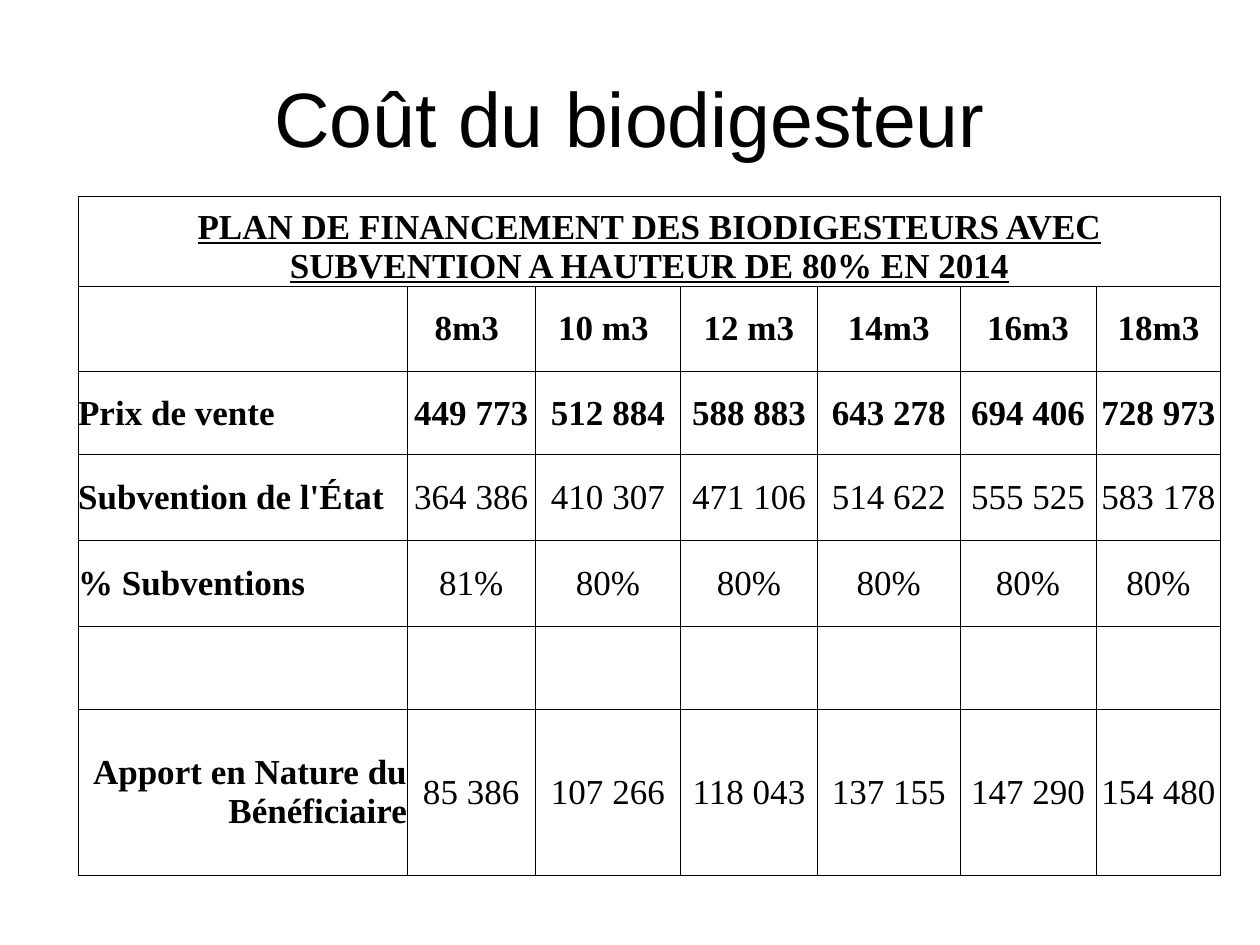
"""Build the slide on the cost and financing of biodigesters."""
from dataclasses import dataclass

from lxml import etree
from pptx import Presentation
from pptx.dml.color import RGBColor
from pptx.enum.text import MSO_ANCHOR, PP_ALIGN
from pptx.oxml.ns import qn
from pptx.slide import Slide
from pptx.table import _Cell
from pptx.text.text import TextFrame
from pptx.util import Pt

LEFT, CENTER, RIGHT = PP_ALIGN.LEFT, PP_ALIGN.CENTER, PP_ALIGN.RIGHT
MIDDLE, BOTTOM = MSO_ANCHOR.MIDDLE, MSO_ANCHOR.BOTTOM
COLORS = {"text": "000000", "border": "000000", "cell": "FFFFFF"}
COLUMN_WIDTHS = [187.92, 73.44, 82.8, 78.48, 81.36, 77.76, 71.28]
HEADING_HEIGHT = 51.12
BORDER_WIDTH = 0.5


@dataclass(frozen=True)
class TextStyle:
    size: float
    font: str
    bold: bool = False
    underline: bool = False
    alignment: PP_ALIGN = CENTER


@dataclass(frozen=True)
class FinancingRow:
    height: float
    label: str
    values: tuple[str, ...]
    bold_values: bool = False
    label_alignment: PP_ALIGN = LEFT


TITLE_STYLE = TextStyle(44, "Arial")
HEADING_STYLE = TextStyle(20, "Times New Roman", bold=True, underline=True)
HEADING = "PLAN DE FINANCEMENT DES BIODIGESTEURS AVEC SUBVENTION A HAUTEUR DE 80% EN 2014"
ROWS = [
    FinancingRow(48.96, "", ("8m3 ", "10 m3 ", "12 m3", "14m3", "16m3", "18m3"), True),
    FinancingRow(47.52, "Prix de vente",
                 ("449 773", "512 884", "588 883", "643 278", "694 406", "728 973"), True),
    FinancingRow(48.96, "Subvention de l'État",
                 ("364 386", "410 307", "471 106", "514 622", "555 525", "583 178")),
    FinancingRow(48.96, "% Subventions", ("81%",) + ("80%",) * 5),
    FinancingRow(47.52, "", ("",) * 6),
    FinancingRow(95.04, "Apport en Nature du Bénéficiaire",
                 ("85 386", "107 266", "118 043", "137 155", "147 290", "154 480"),
                 label_alignment=RIGHT),
]


def write_text(text_frame: TextFrame, text: str, style: TextStyle) -> None:
    """Write one styled run into the first paragraph."""
    paragraph = text_frame.paragraphs[0]
    paragraph.alignment = style.alignment
    run = paragraph.add_run()
    run.text = text
    run.font.size = Pt(style.size)
    run.font.name = style.font
    run.font.bold = style.bold
    run.font.underline = style.underline
    run.font.color.rgb = RGBColor.from_string(COLORS["text"])


def format_cell(cell: _Cell) -> None:
    """Give a cell thin borders, a plain fill and no margins."""
    properties = cell._tc.get_or_add_tcPr()
    for side in ("a:lnL", "a:lnR", "a:lnT", "a:lnB"):
        line = etree.SubElement(properties, qn(side), w=str(Pt(BORDER_WIDTH)))
        fill = etree.SubElement(line, qn("a:solidFill"))
        etree.SubElement(fill, qn("a:srgbClr"), val=COLORS["border"])
    cell.fill.solid()
    cell.fill.fore_color.rgb = RGBColor.from_string(COLORS["cell"])
    cell.margin_left = cell.margin_right = cell.margin_top = cell.margin_bottom = 0
    cell.vertical_anchor = MIDDLE


def add_title(slide: Slide) -> None:
    """Add the centred slide title."""
    shape = slide.shapes.add_textbox(Pt(36), Pt(21.6), Pt(648), Pt(90))
    shape.text_frame.word_wrap = True
    shape.text_frame.vertical_anchor = MIDDLE
    write_text(shape.text_frame, "Coût du biodigesteur", TITLE_STYLE)


def add_financing_table(slide: Slide) -> None:
    """Add the financing table with its merged heading."""
    heights = [HEADING_HEIGHT] + [row.height for row in ROWS]
    table = slide.shapes.add_table(
        len(heights), len(COLUMN_WIDTHS), Pt(44.64), Pt(112.32),
        Pt(sum(COLUMN_WIDTHS)), Pt(sum(heights))).table
    table.first_row = table.horz_banding = False
    for column, width in zip(table.columns, COLUMN_WIDTHS):
        column.width = Pt(width)
    for table_row, height in zip(table.rows, heights):
        table_row.height = Pt(height)
    for cell in table.iter_cells():
        format_cell(cell)

    heading = table.cell(0, 0)
    heading.merge(table.cell(0, len(COLUMN_WIDTHS) - 1))
    heading.vertical_anchor = BOTTOM
    write_text(heading.text_frame, HEADING, HEADING_STYLE)

    for row_index, row in enumerate(ROWS, start=1):
        label_style = TextStyle(20, "Times New Roman", True, alignment=row.label_alignment)
        value_style = TextStyle(20, "Times New Roman", row.bold_values)
        for column_index, text in enumerate((row.label, *row.values)):
            if text:
                style = value_style if column_index else label_style
                write_text(table.cell(row_index, column_index).text_frame, text, style)


def main() -> None:
    """Create and save the presentation."""
    presentation = Presentation()
    presentation.slide_width, presentation.slide_height = Pt(720), Pt(540)
    slide = presentation.slides.add_slide(presentation.slide_layouts[6])
    add_title(slide)
    add_financing_table(slide)
    presentation.save("out.pptx")


if __name__ == "__main__":
    main()
